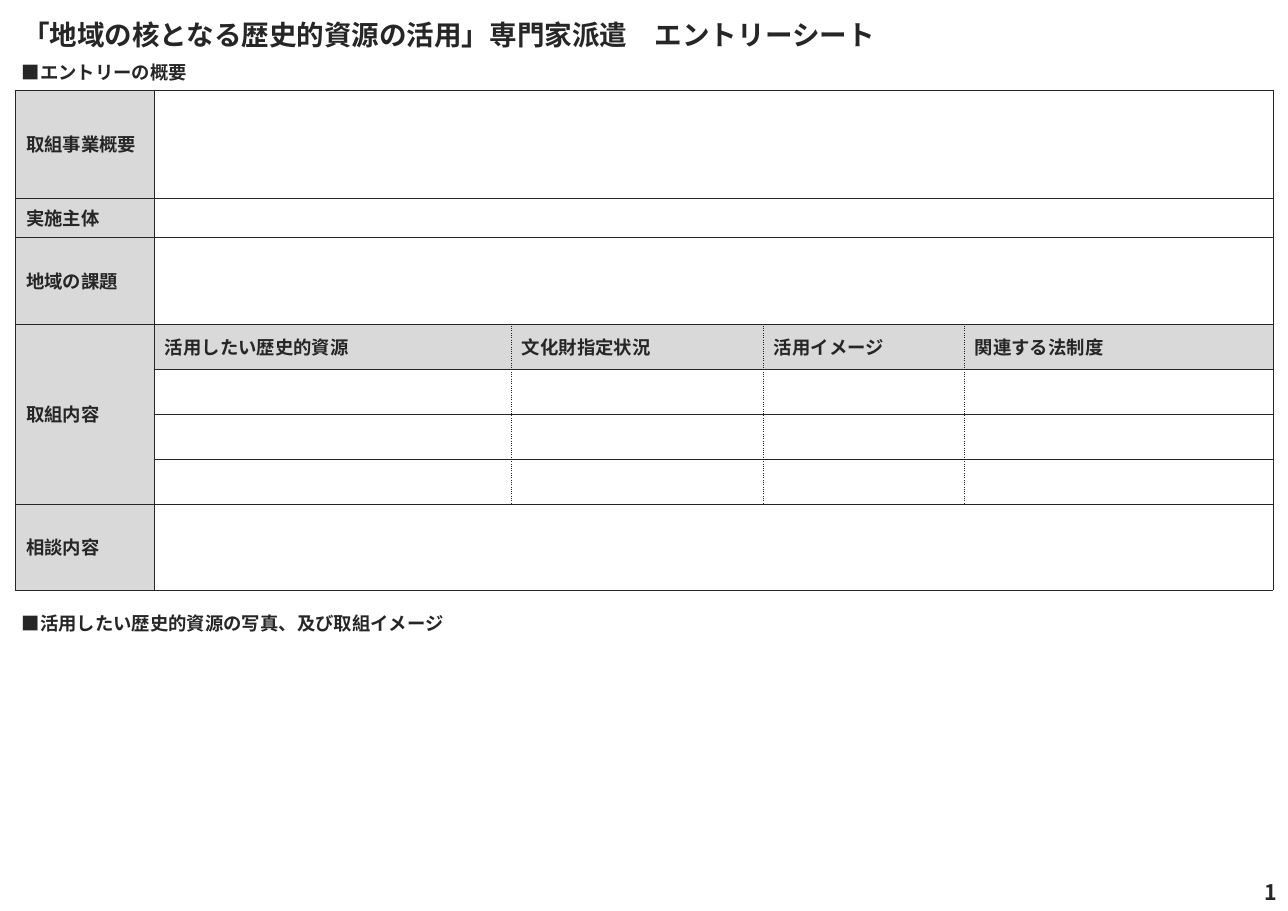
from lxml import etree
from pptx import Presentation
from pptx.dml.color import RGBColor
from pptx.enum.text import MSO_ANCHOR, MSO_AUTO_SIZE, PP_ALIGN
from pptx.oxml.ns import qn
from pptx.util import Pt

TOP, MIDDLE = MSO_ANCHOR.TOP, MSO_ANCHOR.MIDDLE
LEFT, RIGHT = PP_ALIGN.LEFT, PP_ALIGN.RIGHT
FONT = "Noto Sans CJK JP"
INK = RGBColor(0x26, 0x26, 0x26)
GREY = RGBColor(0xD9, 0xD9, 0xD9)
PX = 914400 / 110.2


def write(tf, text, size=12, align=LEFT):
    p = tf.paragraphs[0]
    p.alignment = align
    r = p.add_run()
    r.text = text
    r.font.size = Pt(size)
    r.font.bold = True
    r.font.name = FONT
    r.font.color.rgb = INK
    etree.SubElement(r.font._element, qn("a:ea"), typeface=FONT)


def add_border(cell, side, dash):
    """Draw one side (L, R, T or B) of a table cell."""
    ln = etree.SubElement(cell._tc.get_or_add_tcPr(), qn(f"a:ln{side}"), w=str(Pt(0.5)))
    fill = etree.SubElement(ln, qn("a:solidFill"))
    etree.SubElement(fill, qn("a:srgbClr"), val=str(INK))
    etree.SubElement(ln, qn("a:prstDash"), val=dash)


prs = Presentation()
prs.slide_width, prs.slide_height = round(1288 * PX), round(911 * PX)
s = prs.slides.add_slide(prs.slide_layouts[5])

# Title
title = s.shapes.title
title.left, title.top, title.width, title.height = [round(v * PX) for v in (11, 12, 885, 44)]
tf = title.text_frame
tf.auto_size = MSO_AUTO_SIZE.NONE
tf.vertical_anchor = TOP
write(tf, "「地域の核となる歴史的資源の活用」専門家派遣　エントリーシート", size=18)

# Section headings and page number
for text, box, size, align, anchor in [
    ("■エントリーの概要", (11, 56, 620, 33), 12, LEFT, TOP),
    ("■活用したい歴史的資源の写真、及び取組イメージ", (11, 607, 620, 33), 12, LEFT, TOP),
    ("1", (1252, 872, 36, 40), 14, RIGHT, MIDDLE),
]:
    tf = s.shapes.add_textbox(*[round(v * PX) for v in box]).text_frame
    tf.word_wrap = True
    tf.vertical_anchor = anchor
    write(tf, text, size=size, align=align)

# Entry table
COL_WIDTHS = [139, 357, 252, 201, 309]
ROW_HEIGHTS = [108, 39, 87, 45, 45, 45, 45, 86]
ROW_LABELS = {0: "取組事業概要", 1: "実施主体", 2: "地域の課題", 3: "取組内容", 7: "相談内容"}
RESOURCE_HEADS = ["活用したい歴史的資源", "文化財指定状況", "活用イメージ", "関連する法制度"]
RESOURCE_ROWS = range(3, 7)
LAST_COL = len(COL_WIDTHS) - 1

labels = {(row, 0): text for row, text in ROW_LABELS.items()}
labels.update({(3, col): text for col, text in enumerate(RESOURCE_HEADS, 1)})

frame = s.shapes.add_table(
    len(ROW_HEIGHTS), len(COL_WIDTHS), round(15 * PX), round(90 * PX),
    round(sum(COL_WIDTHS) * PX), round(sum(ROW_HEIGHTS) * PX))
table = frame.table
table.first_row = table.horz_banding = False
for column, width in zip(table.columns, COL_WIDTHS):
    column.width = round(width * PX)
for row, height in zip(table.rows, ROW_HEIGHTS):
    row.height = round(height * PX)

for row in range(len(ROW_HEIGHTS)):
    for col in range(len(COL_WIDTHS)):
        cell = table.cell(row, col)
        cell.vertical_anchor = MIDDLE
        inner = row in RESOURCE_ROWS
        add_border(cell, "L", "sysDot" if inner and col > 1 else "solid")
        add_border(cell, "R", "sysDot" if inner and 0 < col < LAST_COL else "solid")
        add_border(cell, "T", "solid")
        add_border(cell, "B", "solid")
        if (row, col) in labels:
            cell.fill.solid()
            cell.fill.fore_color.rgb = GREY
            write(cell.text_frame, labels[row, col])
        else:
            cell.fill.background()
            p = cell.text_frame.paragraphs[0]
            etree.SubElement(p._p, qn("a:endParaRPr"), sz="1200")

for row in ROW_LABELS:
    if row not in RESOURCE_ROWS:
        table.cell(row, 1).merge(table.cell(row, LAST_COL))
table.cell(RESOURCE_ROWS[0], 0).merge(table.cell(RESOURCE_ROWS[-1], 0))

prs.save("out.pptx")
